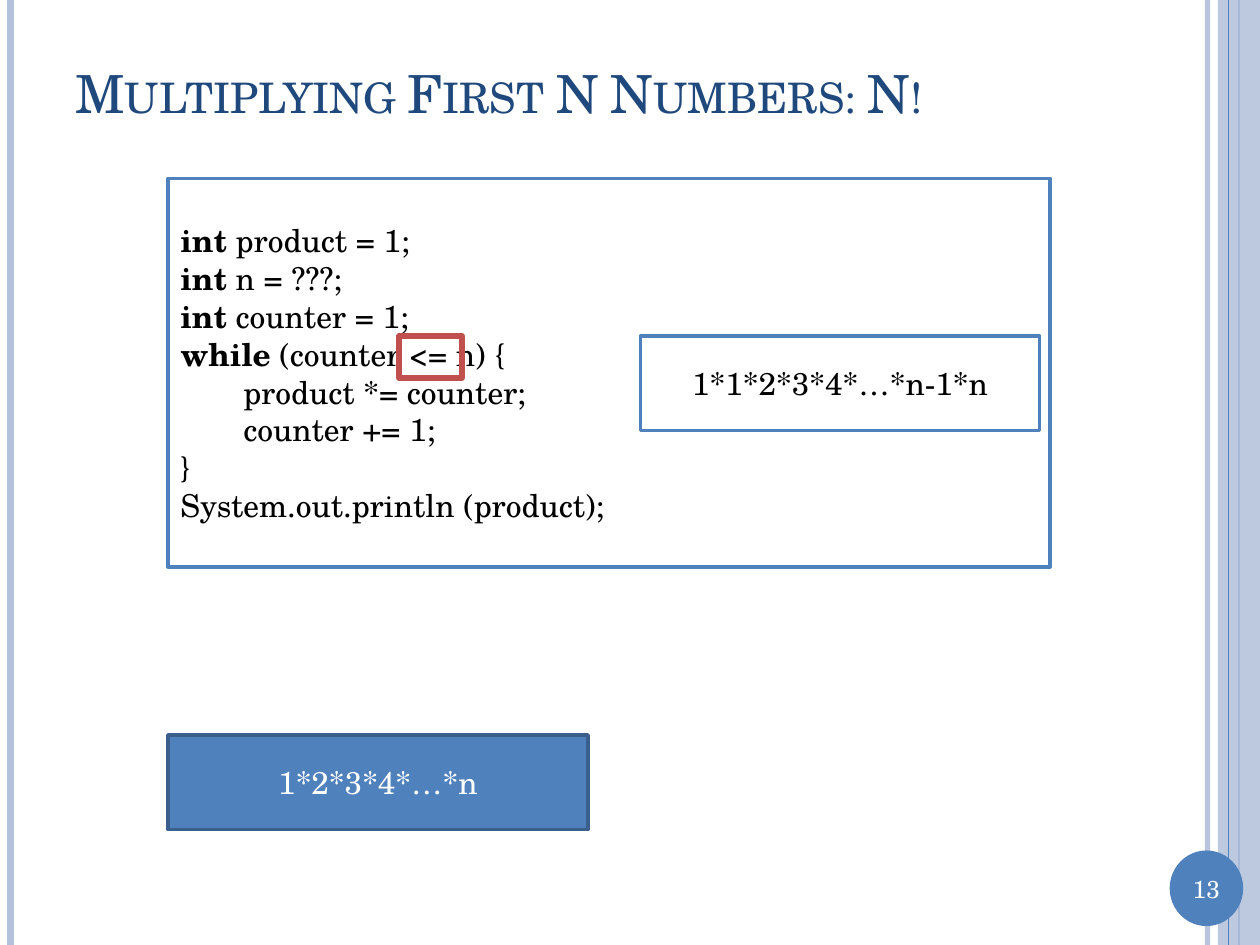
import pptx
import pptx.dml.color
import pptx.enum.shapes
import pptx.enum.text
import pptx.oxml.ns
import pptx.util
from lxml import etree

RGBColor = pptx.dml.color.RGBColor
BLUE = RGBColor(0x4F, 0x81, 0xBD)
DARK_BLUE = RGBColor(0x3A, 0x5F, 0x8C)
PALE_BLUE = RGBColor(0xB3, 0xC1, 0xDB)
NAVY = RGBColor(0x1F, 0x49, 0x7D)
RED = RGBColor(0xC0, 0x50, 0x4D)
BLACK = RGBColor(0, 0, 0)
WHITE = RGBColor(255, 255, 255)

qualified = pptx.oxml.ns.qn
Pt = pptx.util.Pt
SHAPES = pptx.enum.shapes.MSO_SHAPE
ALIGN = pptx.enum.text.PP_ALIGN

presentation = pptx.Presentation()
presentation.slide_width = pptx.util.Inches(10)
presentation.slide_height = pptx.util.Inches(7.5)
slide = presentation.slides.add_slide(presentation.slide_layouts[6])

# The grid has 120 columns and 90 rows of square cells.
CELL = presentation.slide_width / 120
ROWS = 90


def add_box(kind, cells, fill=None, line=None, width=2):
    """Add a shape placed by (column, row, columns, rows)."""
    shape = slide.shapes.add_shape(kind, *[round(n * CELL) for n in cells])
    shape.shadow.inherit = False
    if fill is None:
        shape.fill.background()
    else:
        shape.fill.solid()
        shape.fill.fore_color.rgb = fill
    if line is None:
        shape.line.fill.background()
    else:
        shape.line.color.rgb = line
        shape.line.width = Pt(width)
    return shape


def write_lines(shape, lines, color, size=18, align=ALIGN.LEFT):
    """Write one paragraph per line; each line is a list of (text, bold) runs."""
    frame = shape.text_frame
    frame.word_wrap = True
    frame.vertical_anchor = pptx.enum.text.MSO_ANCHOR.MIDDLE
    font_format = {"name": "TeX Gyre Schola", "size": Pt(size)}
    for index, pieces in enumerate(lines):
        paragraph = frame.add_paragraph() if index else frame.paragraphs[0]
        paragraph.alignment = align
        for text, bold in pieces:
            run = paragraph.add_run()
            run.text = text
            for name, value in {**font_format, "bold": bold}.items():
                setattr(run.font, name, value)
            run.font.color.rgb = color


# Side stripes; the band lies above the first three rules and below the last.
side_parts = [
    ("rule", 115, PALE_BLUE, 3, 93),
    ("rule", 1, PALE_BLUE, 4.5, 100),
    ("rule", 118, BLUE, 1.5, 100),
    ("band", 116, PALE_BLUE, 4, 87),
    ("rule", 117, BLUE, 0.75, 100),
]
for part, column, color, width, opacity in side_parts:
    if part == "band":
        stripe = add_box(SHAPES.RECTANGLE, (column, 0, width, ROWS), color)
    else:
        x = round(column * CELL)
        stripe = slide.shapes.add_connector(
            pptx.enum.shapes.MSO_CONNECTOR.STRAIGHT, x, 0, x, presentation.slide_height)
        stripe.line.color.rgb = color
        stripe.line.width = Pt(width)
        etree.SubElement(stripe._element.spPr, qualified("a:effectLst"))
    if opacity < 100:
        color_element = next(stripe._element.spPr.iter(qualified("a:srgbClr")))
        alpha = etree.SubElement(color_element, qualified("a:alpha"))
        alpha.set("val", str(opacity * 1000))

page_badge = add_box(SHAPES.OVAL, (111.4, 81, 7, 7.2), BLUE)
page_badge.text_frame.margin_left = page_badge.text_frame.margin_right = 0
write_lines(page_badge, [[("13", False)]], WHITE, 14, ALIGN.CENTER)

title = slide.shapes.add_textbox(*[round(n * CELL) for n in (6, 3.6, 104, 10.4)])
write_lines(title, [[("Multiplying First N Numbers: N!", False)]], NAVY, 30)
title.text_frame.paragraphs[0].runs[0]._r.get_or_add_rPr().set("cap", "small")

code_lines = [
    [("int", True), (" product = 1;", False)],
    [("int", True), (" n = ???;", False)],
    [("int", True), (" counter = 1;", False)],
    [("while", True), (" (counter <= n) {", False)],
    [("\tproduct *= counter;", False)],
    [("\tcounter += 1;", False)],
    [("}", False)],
    [("System.out.println (product);", False)],
]
code_box = add_box(SHAPES.RECTANGLE, (16, 17, 84, 37), WHITE, BLUE)
write_lines(code_box, code_lines, BLACK)

formulas = [
    ("1*2*3*4*…*n", (16, 70, 40, 9), BLUE, DARK_BLUE, WHITE),
    ("1*1*2*3*4*…*n-1*n", (61, 32, 38, 9), WHITE, BLUE, BLACK),
]
for formula, cells, fill, line, color in formulas:
    formula_box = add_box(SHAPES.RECTANGLE, cells, fill, line)
    write_lines(formula_box, [[(formula, False)]], color, align=ALIGN.CENTER)

add_box(SHAPES.RECTANGLE, (38, 32, 6, 4), line=RED, width=3)

presentation.save("out.pptx")
